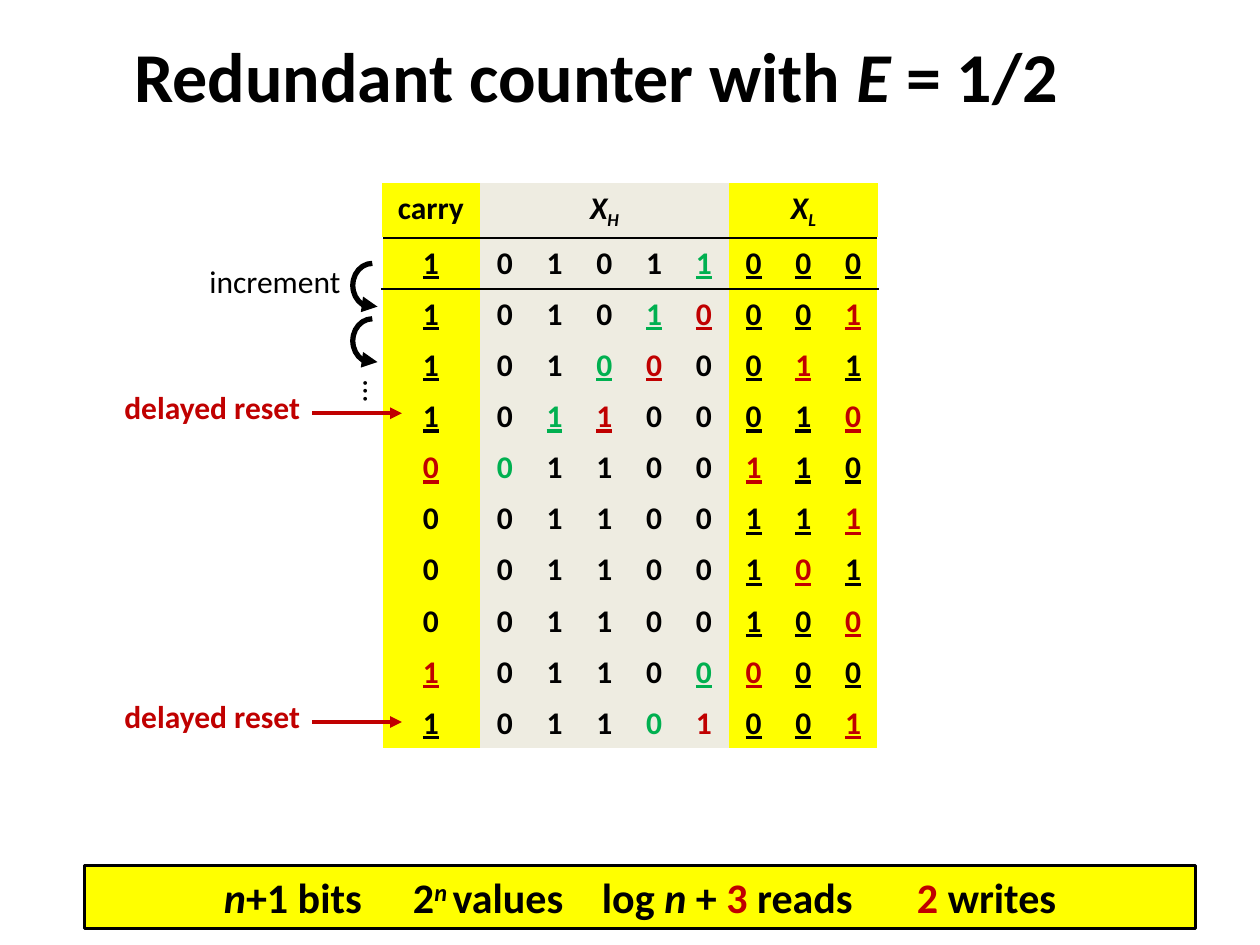
from lxml.etree import SubElement
from pptx import Presentation
from pptx.dml.color import RGBColor
from pptx.enum.shapes import MSO_CONNECTOR, MSO_SHAPE
from pptx.enum.text import MSO_ANCHOR, PP_ALIGN
from pptx.oxml.ns import qn
from pptx.util import Inches, Pt

BLACK, WHITE, RED, GREEN = "000000", "FFFFFF", "C00000", "00B050"
YELLOW, BEIGE = "FFFF00", "EEECE1"
NO_GRID_STYLE = "{2D5ABB26-0587-4C30-8999-92F81FD0307C}"


def rgb(color):
    return RGBColor.from_string(color)


def write(frame, *runs, size=18, color=BLACK, bold=True, align=PP_ALIGN.CENTER,
          anchor=MSO_ANCHOR.TOP):
    """Fill a text frame with (text, overrides) runs in one paragraph."""
    frame.word_wrap = True
    frame.vertical_anchor = anchor
    paragraph = frame.paragraphs[0]
    paragraph.alignment = align
    for text, overrides in runs:
        run = paragraph.add_run()
        run.text = text
        font = run.font
        font.name, font.size, font.bold = "Calibri", Pt(size), bold
        font.italic = overrides.get("italic", False)
        font.underline = overrides.get("underline", False)
        font.color.rgb = rgb(overrides.get("color", color))
        if "baseline" in overrides:
            font._element.set("baseline", str(overrides["baseline"] * 1000))


prs = Presentation()
prs.slide_width, prs.slide_height = Inches(10), Inches(7.5)
slide = prs.slides.add_slide(prs.slide_layouts[5])
shapes = slide.shapes
italic = {"italic": True}
red = {"color": RED}

title = shapes.title
title.left, title.top = Inches(0.2), Inches(0.21)
title.width, title.height = Inches(9.06), Inches(0.77)
write(title.text_frame, ("Redundant counter with ", {}), ("E", italic),
      (" = 1/2", {}), size=40)

# Counter states: "_" underlines a bit, "r" marks it red, "g" green
states = [
    "_1 0 1 0 1 _g1 _0 _0 _0",
    "_1 0 1 0 _g1 _r0 _0 _0 _r1",
    "_1 0 1 _g0 _r0 0 _0 _r1 _1",
    "_1 0 _g1 _r1 0 0 _0 _1 _r0",
    "_r0 g0 1 1 0 0 _r1 _1 _0",
    "0 0 1 1 0 0 _1 _1 _r1",
    "0 0 1 1 0 0 _1 _r0 _1",
    "0 0 1 1 0 0 _1 _0 _r0",
    "_r1 0 1 1 0 _g0 _r0 _0 _0",
    "_1 0 1 1 g0 r1 _0 _0 _r1",
]
high_columns = range(1, 6)
row_count, column_count = len(states) + 1, 9
counter = shapes.add_table(row_count, column_count, Inches(3.03), Inches(1.45),
                           Inches(3.94), Inches(4.46)).table
counter.first_row = counter.horz_banding = False
counter._tbl.tblPr.find(qn("a:tableStyleId")).text = NO_GRID_STYLE
for index, column in enumerate(counter.columns):
    column.width = Inches(0.395 if index else 0.78)

for row in range(row_count):
    for column in range(column_count):
        cell = counter.cell(row, column)
        borders = {}
        if row and column == 0:
            borders["a:lnL"] = WHITE
        if row and column == column_count - 1:
            borders["a:lnR"] = WHITE
        if row == 1:
            borders["a:lnT"] = BLACK
        if row == 0:
            borders["a:lnB"] = BLACK
        if row == row_count - 1:
            borders["a:lnB"] = WHITE
        properties = cell._tc.get_or_add_tcPr()
        for side, color in borders.items():
            border = SubElement(properties, qn(side), w=str(Pt(1)))
            border_fill = SubElement(border, qn("a:solidFill"))
            SubElement(border_fill, qn("a:srgbClr"), val=color)
        cell.fill.solid()
        cell.fill.fore_color.rgb = rgb(BEIGE if column in high_columns else YELLOW)

write(counter.cell(0, 0).text_frame, ("carry", {}))
for first, last, subscript in [(1, 5, "H"), (6, 8, "L")]:
    heading = counter.cell(0, first)
    heading.merge(counter.cell(0, last))
    write(heading.text_frame, ("X", italic),
          (subscript, {"italic": True, "baseline": -25}))
for row, state in enumerate(states, start=1):
    for column, bit in enumerate(state.split()):
        color = RED if "r" in bit else GREEN if "g" in bit else BLACK
        write(counter.cell(row, column).text_frame,
              (bit[-1], {"underline": "_" in bit, "color": color}))

for top in (2.09, 2.53):
    step = shapes.add_shape(MSO_SHAPE.ARC, Inches(2.8), Inches(top),
                            Inches(0.31), Inches(0.35))
    step.adjustments[0], step.adjustments[1] = 162, 62.301
    step.shadow.inherit = False
    step.fill.background()
    step.line.color.rgb = rgb(BLACK)
    step.line.width = Pt(3)
    step._element.spPr.find(qn("a:xfrm")).set("flipH", "1")
    SubElement(step.line._get_or_add_ln(), qn("a:tailEnd"), type="triangle")

increment = shapes.add_textbox(Inches(0.91), Inches(2.03), Inches(1.89), Inches(0.4))
write(increment.text_frame, ("increment", {}), bold=False, align=PP_ALIGN.RIGHT)
ellipsis = shapes.add_textbox(Inches(2.75), Inches(2.96), Inches(0.47), Inches(0.4))
ellipsis.rotation = 90
write(ellipsis.text_frame, ("…", {}), bold=False, align=PP_ALIGN.LEFT)

summary = shapes.add_shape(MSO_SHAPE.RECTANGLE, Inches(0.67), Inches(6.87),
                           Inches(8.82), Inches(0.5))
summary.shadow.inherit = False
summary.fill.solid()
summary.fill.fore_color.rgb = rgb(YELLOW)
summary.line.color.rgb = rgb(BLACK)
summary.line.width = Pt(1.5)
write(summary.text_frame, ("n", italic), ("+1 bits\t2", {}),
      ("n ", {"italic": True, "baseline": 30}), ("values\tlog ", {}),
      ("n", italic), (" + ", {}), ("3 ", red), ("reads\t\t", {}),
      ("2 ", red), ("writes", {}), size=24, anchor=MSO_ANCHOR.MIDDLE)

for top in (3.03, 5.48):
    arrow_y = Inches(top + 0.25)
    arrow = shapes.add_connector(MSO_CONNECTOR.STRAIGHT, Inches(2.48), arrow_y,
                                 Inches(3.19), arrow_y)
    arrow.line.color.rgb = rgb(RED)
    arrow.line.width = Pt(2.25)
    SubElement(arrow.line._get_or_add_ln(), qn("a:tailEnd"), type="triangle")
    SubElement(arrow._element.spPr, qn("a:effectLst"))
    reset = shapes.add_textbox(Inches(0.83), Inches(top), Inches(1.65), Inches(0.4))
    write(reset.text_frame, ("delayed reset", {}), color=RED, align=PP_ALIGN.RIGHT)

prs.save("out.pptx")
